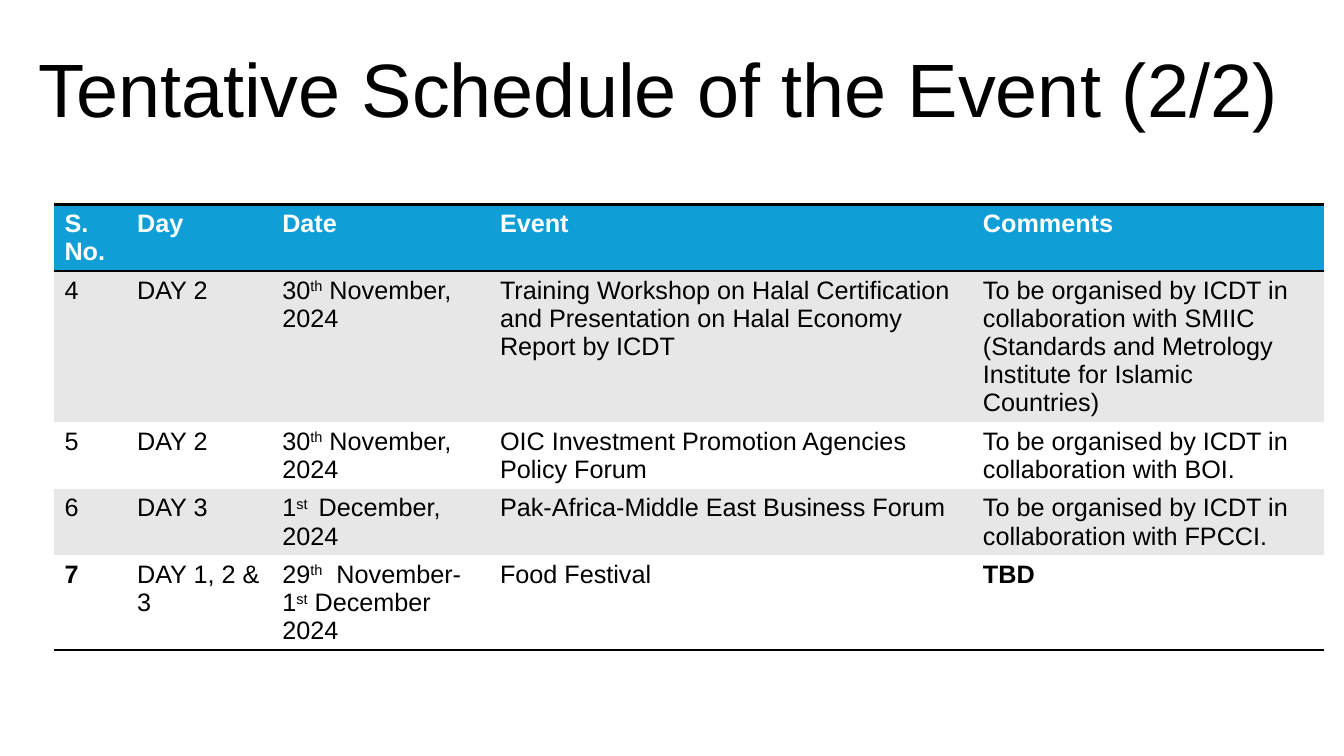
import lxml.etree
import pptx
import pptx.dml.color
import pptx.enum.text
import pptx.oxml.ns
import pptx.util

Inches = pptx.util.Inches
Pt = pptx.util.Pt
RGBColor = pptx.dml.color.RGBColor
qn = pptx.oxml.ns.qn

BLACK = RGBColor(0x00, 0x00, 0x00)
WHITE = RGBColor(0xFF, 0xFF, 0xFF)
HEADER_BLUE = RGBColor(0x0F, 0x9E, 0xD5)
BAND_GREY = RGBColor(0xE7, 0xE7, 0xE7)
FONT = "Arial"
PLAIN_TABLE_STYLE = "{2D5ABB26-0587-4C30-8999-92F81FD0307C}"

COLUMN_WIDTHS = [0.72, 1.44, 2.16, 4.79, 3.48]
ROW_HEIGHTS = [0.66, 1.5, 0.66, 0.66, 0.94]

# A cell is a list of text pieces; every second piece is superscript
SCHEDULE = [
    [["S. No."], ["Day"], ["Date"], ["Event"], ["Comments"]],
    [["4"], ["DAY 2"], ["30", "th", " November, 2024"],
     ["Training Workshop on Halal Certification and Presentation on "
      "Halal Economy Report by ICDT"],
     ["To be organised by ICDT in collaboration with SMIIC (Standards and "
      "Metrology Institute for Islamic Countries)"]],
    [["5"], ["DAY 2"], ["30", "th", " November, 2024"],
     ["OIC Investment Promotion Agencies Policy Forum"],
     ["To be organised by ICDT in collaboration with BOI."]],
    [["6"], ["DAY 3"], ["1", "st ", " December, 2024"],
     ["Pak-Africa-Middle East Business Forum"],
     ["To be organised by ICDT in collaboration with FPCCI."]],
    [["7"], ["DAY 1, 2 & 3"],
     ["29", "th", "  November- 1", "st", " December 2024"],
     ["Food Festival"], ["TBD"]],
]
BOLD_CELLS = {(4, 0), (4, 4)}


def add_run(paragraph, text, size, color, bold=False, superscript=False):
    run = paragraph.add_run()
    run.text = text
    run.font.name = FONT
    run.font.size = Pt(size)
    run.font.bold = bold
    run.font.color.rgb = color
    if superscript:
        run._r.get_or_add_rPr().set("baseline", "30000")


def add_title(slide, text):
    title = slide.shapes.add_textbox(
        Inches(0), Inches(0.3), Inches(13.06), Inches(1.24))
    frame = title.text_frame
    frame.word_wrap = True
    frame.vertical_anchor = pptx.enum.text.MSO_ANCHOR.MIDDLE
    paragraph = frame.paragraphs[0]
    paragraph.alignment = pptx.enum.text.PP_ALIGN.CENTER
    paragraph.line_spacing = 0.9
    add_run(paragraph, text, 54, BLACK)


def add_border(cell, side):
    properties = cell._tc.get_or_add_tcPr()
    line = lxml.etree.SubElement(properties, qn(f"a:{side}"), w=str(Pt(2)))
    fill = lxml.etree.SubElement(line, qn("a:solidFill"))
    lxml.etree.SubElement(fill, qn("a:srgbClr"), val=str(BLACK))


def fill_cell(cell, pieces, row, column):
    is_header = row == 0
    # Borders must precede the fill in the cell properties
    if is_header:
        add_border(cell, "lnT")
    if row in (0, len(SCHEDULE) - 1):
        add_border(cell, "lnB")
    cell.fill.solid()
    if is_header:
        cell.fill.fore_color.rgb = HEADER_BLUE
    else:
        cell.fill.fore_color.rgb = BAND_GREY if row % 2 else WHITE
    color = WHITE if is_header else BLACK
    bold = is_header or (row, column) in BOLD_CELLS
    paragraph = cell.text_frame.paragraphs[0]
    for index, text in enumerate(pieces):
        add_run(paragraph, text, 18, color, bold, superscript=index % 2 == 1)


def add_schedule(slide):
    frame = slide.shapes.add_table(
        len(ROW_HEIGHTS), len(COLUMN_WIDTHS), Inches(0.54), Inches(2.03),
        Inches(sum(COLUMN_WIDTHS)), Inches(sum(ROW_HEIGHTS)))
    table = frame.table
    table.horz_banding = False
    style = frame._element.find(".//" + qn("a:tableStyleId"))
    style.text = PLAIN_TABLE_STYLE
    for column, width in zip(table.columns, COLUMN_WIDTHS):
        column.width = Inches(width)
    for row, height in zip(table.rows, ROW_HEIGHTS):
        row.height = Inches(height)
    for row, cells in enumerate(SCHEDULE):
        for column, pieces in enumerate(cells):
            fill_cell(table.cell(row, column), pieces, row, column)


def main():
    presentation = pptx.Presentation()
    presentation.slide_width = Inches(13.33)
    presentation.slide_height = Inches(7.5)
    slide = presentation.slides.add_slide(presentation.slide_layouts[6])
    # Schedule table, then the heading
    add_schedule(slide)
    add_title(slide, "Tentative Schedule of the Event (2/2)")
    presentation.save("out.pptx")


if __name__ == "__main__":
    main()
